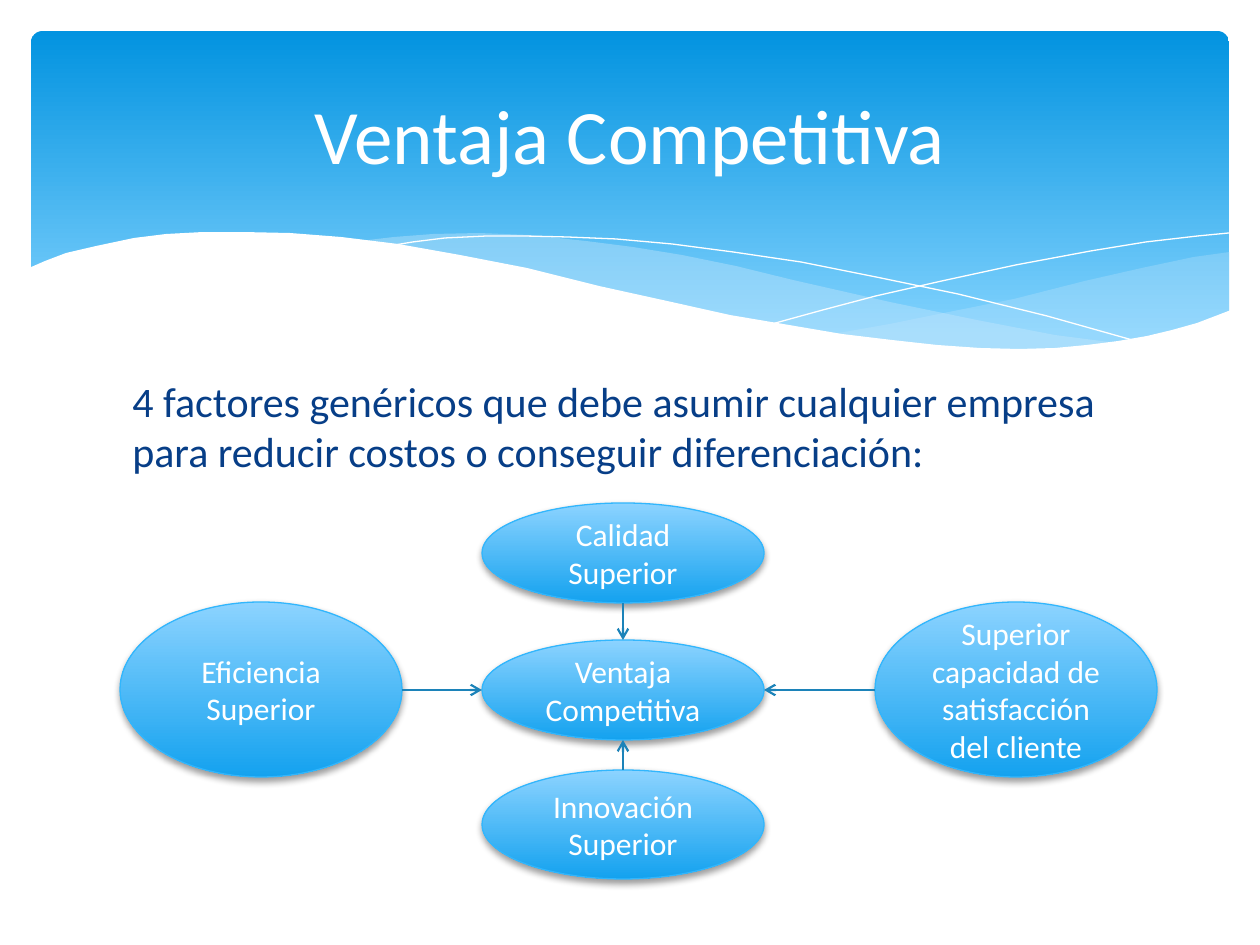
from lxml import etree
from pptx import Presentation
from pptx import util as u
from pptx.dml.color import RGBColor
from pptx.enum import shapes, text
from pptx.oxml import parse_xml
from pptx.oxml.ns import nsdecls, qn

PX = 914400 / 126
COLORS = {
    "white": "FFFFFF", "body": "073E87", "arrow": "1C83B9", "outline": "31B6FD",
    "header_top": "0293E0", "header_bottom": "83D3FE",
    "oval_top": "8CD3FF", "oval_bottom": "14A2EF", "band": "C6E7FC",
}
RIGHT_BAND = [
    (1230, 252), (1194, 257), (1142, 268), (1085, 281), (1014, 299), (949, 312),
    (890, 324), (833, 334), (871, 339), (906, 343), (939, 346), (969, 348),
    (1012, 350), (1051, 349), (1087, 347), (1120, 343), (1150, 338), (1178, 332),
    (1213, 318), (1230, 311),
]
LEFT_BAND = [
    (1125, 344), (1055, 335), (977, 320), (890, 302), (793, 280), (736, 266),
    (682, 255), (633, 247), (586, 241), (529, 235), (479, 233), (433, 234),
    (394, 237), (360, 241), (407, 247), (456, 256), (509, 266), (566, 280),
    (619, 292), (713, 312), (779, 325), (838, 335), (893, 343), (942, 348),
    (989, 350), (1031, 350), (1068, 349), (1104, 347),
]
FALLING_LINE = [
    (389, 246), (413, 242), (445, 238), (487, 236), (524, 236), (567, 237),
    (616, 239), (672, 244), (733, 252), (801, 262), (876, 277), (958, 294),
    (1047, 316), (1143, 343),
]
RISING_LINE = [
    (772, 324), (823, 310), (876, 296), (942, 281), (1016, 265), (1091, 251),
    (1146, 242), (1198, 236), (1229, 233),
]
WAVE = [
    (29, 268), (45, 261), (66, 253), (96, 246), (134, 238), (166, 234), (203, 232),
    (243, 232), (290, 233), (341, 237), (398, 244), (460, 255), (527, 268),
    (599, 286), (667, 301), (730, 315), (789, 325), (842, 334), (892, 340),
    (937, 345), (980, 348), (1019, 349), (1055, 348), (1087, 345), (1118, 341),
    (1147, 336), (1172, 330), (1197, 323), (1231, 310), (1231, 415), (29, 415),
]


def fill_gradient(shape, top, bottom, end):
    shape.fill.gradient()
    shape.fill.gradient_angle = 270
    for stop, name, position in zip(shape.fill.gradient_stops, (top, bottom), (0, end)):
        stop.color.rgb = RGBColor.from_string(COLORS[name])
        stop.position = position


def write(shape, wording, size, color, align):
    frame = shape.text_frame
    frame.word_wrap = True
    frame.text = wording
    paragraph = frame.paragraphs[0]
    paragraph.alignment = align
    paragraph.font.size = u.Pt(size)
    paragraph.font.name = "Calibri"
    paragraph.font.color.rgb = RGBColor.from_string(COLORS[color])
    return frame


presentation = Presentation()
presentation.slide_width = u.Inches(10)
presentation.slide_height = u.Inches(7.5)
slide = presentation.slides.add_slide(presentation.slide_layouts[5])

header = slide.shapes.add_shape(
    shapes.MSO_SHAPE.ROUNDED_RECTANGLE, *[round(v * PX) for v in (31, 31, 1198, 340)])
header.adjustments[0] = 0.034
header.shadow.inherit = False
header.line.fill.background()
fill_gradient(header, "header_top", "header_bottom", 0.9)

for points, color, opacity in [
    (RIGHT_BAND, "band", 29), (LEFT_BAND, "band", 40),
    (FALLING_LINE, None, None), (RISING_LINE, None, None), (WAVE, "white", 100),
]:
    builder = slide.shapes.build_freeform(*points[0], scale=PX)
    builder.add_line_segments(points[1:], close=color is not None)
    curve = builder.convert_to_shape()
    curve.shadow.inherit = False
    if color:
        curve.fill.solid()
        curve.fill.fore_color.rgb = RGBColor.from_string(COLORS[color])
        curve.line.fill.background()
        tint = curve.element.spPr.find(qn("a:solidFill"))[0]
        etree.SubElement(tint, qn("a:alpha"), val=str(opacity * 1000))
    else:
        curve.fill.background()
        curve.line.color.rgb = RGBColor.from_string(COLORS["white"])
        curve.line.width = u.Pt(0)

body = slide.shapes.add_textbox(*[round(v * PX) for v in (120, 369, 1021, 475)])
write(body, "4 factores genéricos que debe asumir cualquier empresa para reducir costos "
      "o conseguir diferenciación:", 24, "body", text.PP_ALIGN.LEFT)

title = slide.shapes.title
title.left, title.top, title.width, title.height = [round(v * PX) for v in (63, 47, 1134, 173)]
frame = write(title, "Ventaja Competitiva", 44, "white", text.PP_ALIGN.CENTER)
frame.vertical_anchor = text.MSO_ANCHOR.MIDDLE
title.element.getparent().append(title.element)

for wording, left, top, height in [
    ("Ventaja Competitiva", 482, 640, 100),
    ("Calidad Superior", 482, 503, 100),
    ("Superior capacidad de satisfacción del cliente", 875, 602, 175),
    ("Innovación Superior", 482, 770, 109),
    ("Eficiencia Superior", 120, 602, 175),
]:
    oval = slide.shapes.add_shape(
        shapes.MSO_SHAPE.OVAL, *[round(v * PX) for v in (left, top, 282, height)])
    fill_gradient(oval, "oval_top", "oval_bottom", 1)
    oval.line.color.rgb = RGBColor.from_string(COLORS["outline"])
    oval.line.width = u.Pt(0.75)
    oval.shadow.inherit = False
    oval.element.spPr.find(qn("a:effectLst")).append(parse_xml(
        f'<a:outerShdw {nsdecls("a")} blurRad="50800" dist="25400" dir="5400000" '
        'rotWithShape="0"><a:srgbClr val="000000"><a:alpha val="38000"/></a:srgbClr>'
        '</a:outerShdw>'))
    frame = write(oval, wording, 18, "white", text.PP_ALIGN.CENTER)
    frame.vertical_anchor = text.MSO_ANCHOR.MIDDLE

for ends in [(875, 690, 764, 690), (623, 770, 623, 740),
             (402, 690, 482, 690), (623, 603, 623, 640)]:
    arrow = slide.shapes.add_connector(
        shapes.MSO_CONNECTOR.STRAIGHT, *[round(v * PX) for v in ends])
    arrow.line.color.rgb = RGBColor.from_string(COLORS["arrow"])
    arrow.line.width = u.Pt(1.25)
    properties = arrow.element.spPr
    etree.SubElement(properties.find(qn("a:ln")), qn("a:tailEnd"), type="arrow")
    etree.SubElement(properties, qn("a:effectLst"))

presentation.save("out.pptx")
